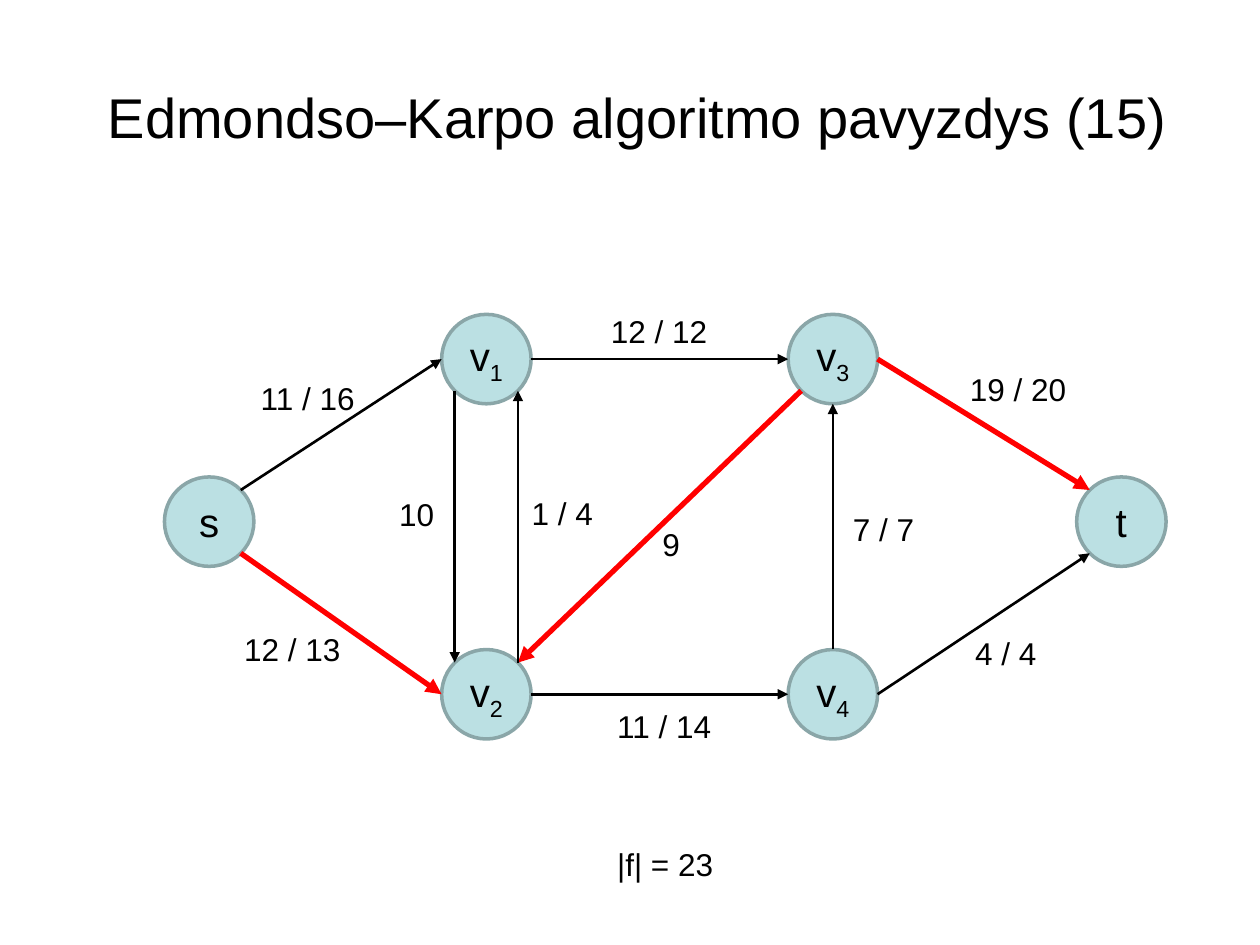
from math import cos, radians, sin

from lxml import etree
from pptx import Presentation
from pptx.dml.color import RGBColor
from pptx.enum.shapes import MSO_CONNECTOR, MSO_SHAPE
from pptx.enum.text import MSO_ANCHOR, MSO_AUTO_SIZE, PP_ALIGN
from pptx.oxml.ns import qn
from pptx.util import Inches, Pt

STRAIGHT = MSO_CONNECTOR.STRAIGHT
OVAL = MSO_SHAPE.OVAL
MIDDLE = MSO_ANCHOR.MIDDLE
CENTER = PP_ALIGN.CENTER
NO_FIT = MSO_AUTO_SIZE.NONE
GROW = MSO_AUTO_SIZE.SHAPE_TO_FIT_TEXT

COLORS = {"text": "000000", "edge": "000000", "path": "FF0000",
          "node": "BBE0E3", "rim": "8AA6A8"}
COLS = [1.66, 3.86, 6.61, 8.9]
ROWS = [2.85, 4.14, 5.51]
SIZE = 0.71
ANGLES = {"right": 0, "bottom right": 45, "bottom": 90, "bottom left": 135,
          "left": 180, "top left": 225, "top": 270, "top right": 315}

NODES = {"s": (0, 1), "v1": (1, 0), "v2": (1, 2),
         "v3": (2, 0), "v4": (2, 2), "t": (3, 1)}
EDGES = [
    ("s", "top right", "v1", "left", "edge"),
    ("s", "bottom right", "v2", "left", "path"),
    ("v1", "right", "v3", "left", "edge"),
    ("v2", "right", "v4", "left", "edge"),
    ("v3", "bottom left", "v2", "top right", "path"),
    ("v1", "bottom left", "v2", "top left", "edge"),
    ("v2", "top right", "v1", "bottom right", "edge"),
    ("v4", "top", "v3", "bottom", "edge"),
    ("v3", "right", "t", "top left", "path"),
    ("v4", "right", "t", "bottom left", "edge"),
]
LABELS = [
    ("11 / 16", 1.97, 2.96, 0.95),
    ("12 / 12", 4.75, 2.43, 0.97),
    ("7 / 7", 6.67, 4, 0.69),
    ("12 / 13", 1.84, 4.95, 0.97),
    ("10", 3.07, 3.88, 0.48),
    ("1 / 4", 4.12, 3.87, 0.69),
    ("9", 5.16, 4.12, 0.34),
    ("11 / 14", 4.8, 5.56, 0.95),
    ("4 / 4", 7.64, 4.98, 0.69),
    ("19 / 20", 7.6, 2.89, 0.97),
    ("|f| = 23", 4.8, 6.66, 0.97),
]


def style(p, size):
    for r in p.runs:
        r.font.name = "Arial"
        r.font.size = Pt(size)
        r.font.color.rgb = RGBColor.from_string(COLORS["text"])


def rim_point(node, side):
    col, row = NODES[node]
    angle = radians(ANGLES[side])
    return (Inches(COLS[col] + SIZE / 2 * cos(angle)),
            Inches(ROWS[row] + SIZE / 2 * sin(angle)))


prs = Presentation()
prs.slide_width, prs.slide_height = Inches(10), Inches(7.5)
s = prs.slides.add_slide(prs.slide_layouts[5])

title = s.shapes.title
title.left, title.top = Inches(0.5), Inches(0.3)
title.width, title.height = Inches(9), Inches(1.25)
tf = title.text_frame
tf.text = " Edmondso–Karpo algoritmo pavyzdys (15)"
tf.auto_size = NO_FIT
tf.vertical_anchor = MIDDLE
tf.paragraphs[0].alignment = CENTER
style(tf.paragraphs[0], 32)

for name, (col, row) in NODES.items():
    sp = s.shapes.add_shape(OVAL, Inches(COLS[col] - SIZE / 2),
                            Inches(ROWS[row] - SIZE / 2),
                            Inches(SIZE), Inches(SIZE))
    sp.shadow.inherit = False
    sp.fill.solid()
    sp.fill.fore_color.rgb = RGBColor.from_string(COLORS["node"])
    sp.line.color.rgb = RGBColor.from_string(COLORS["rim"])
    sp.line.width = Pt(2)
    tf = sp.text_frame
    tf.word_wrap = False
    tf.vertical_anchor = MIDDLE
    p = tf.paragraphs[0]
    p.alignment = CENTER
    for part in name:
        p.add_run().text = part
    style(p, 23)
    for r in p.runs[1:]:
        r.font._element.set("baseline", "-25000")

for start, start_side, end, end_side, kind in EDGES:
    line = s.shapes.add_connector(STRAIGHT, *rim_point(start, start_side),
                                  *rim_point(end, end_side))
    line.line.color.rgb = RGBColor.from_string(COLORS[kind])
    line.line.width = Pt(3 if kind == "path" else 1.5)
    props = line._element.spPr
    etree.SubElement(props.find(qn("a:ln")), qn("a:tailEnd"), type="triangle")
    etree.SubElement(props, qn("a:effectLst"))

for text, left, top, width in LABELS:
    tf = s.shapes.add_textbox(Inches(left), Inches(top),
                              Inches(width), Inches(0.4)).text_frame
    tf.text = text
    tf.word_wrap = False
    tf.auto_size = GROW
    style(tf.paragraphs[0], 18)

prs.save("out.pptx")
